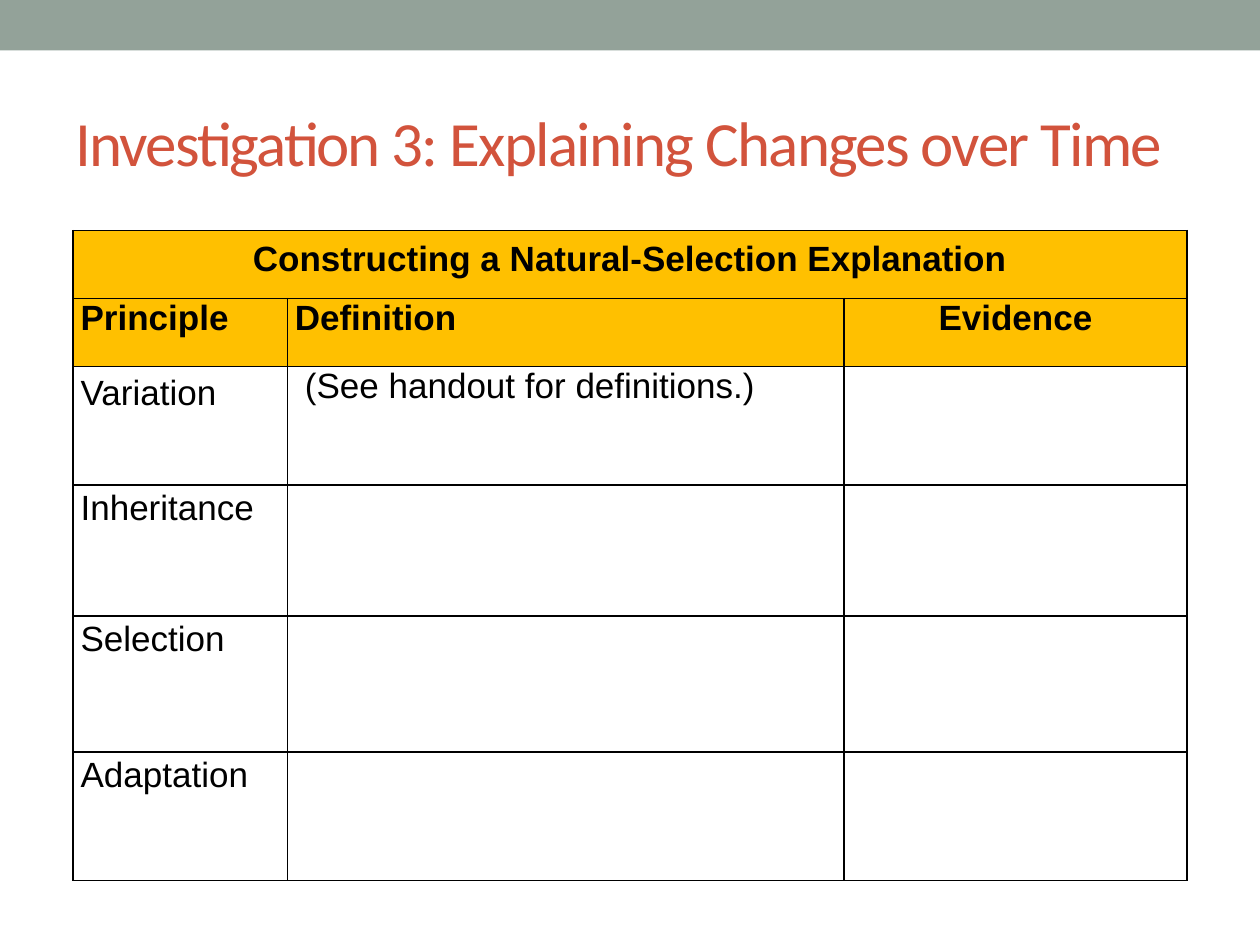
from dataclasses import dataclass

import pptx
import pptx.dml.color
import pptx.enum.shapes
import pptx.enum.text
import pptx.oxml
import pptx.oxml.ns
import pptx.util
from pptx.util import Inches

SAGE, RUST, AMBER = "93A299", "D2533C", "FFC000"
BLACK, WHITE = "000000", "FFFFFF"
ALIGN = pptx.enum.text.PP_ALIGN

COLUMN_WIDTHS = (1.7, 4.42, 2.72)
ROW_HEIGHTS = (0.54, 0.54, 0.94, 1.04, 1.08, 1.02)
HEADER_ROWS = 2


@dataclass
class Entry:
    row: int
    column: int
    wording: str
    align: ALIGN = ALIGN.LEFT
    top: float = 0
    left: float = 0.06


ENTRIES = (
    Entry(0, 0, "Constructing a Natural-Selection Explanation", ALIGN.CENTER, top=0.07),
    Entry(1, 0, "Principle"),
    Entry(1, 1, "Definition"),
    Entry(1, 2, "Evidence", ALIGN.CENTER),
    Entry(2, 0, "Variation", top=0.06),
    Entry(2, 1, "(See handout for definitions.)", left=0.14),
    Entry(3, 0, "Inheritance", top=0.03),
    Entry(4, 0, "Selection", top=0.03),
    Entry(5, 0, "Adaptation", top=0.03),
)


def paint(color_format, hex_color: str) -> None:
    """Give a fill or a font a solid colour."""
    if hasattr(color_format, "solid"):
        color_format.solid()
        color_format.fore_color.rgb = pptx.dml.color.RGBColor.from_string(hex_color)
    else:
        color_format.color.rgb = pptx.dml.color.RGBColor.from_string(hex_color)


def style_font(font, name: str, size: float, hex_color: str, bold: bool = False) -> None:
    font.name = name
    font.size = pptx.util.Pt(size)
    font.bold = bold
    paint(font, hex_color)


def add_band(slide) -> None:
    band = slide.shapes.add_shape(
        pptx.enum.shapes.MSO_SHAPE.RECTANGLE, 0, 0, Inches(10), Inches(0.4))
    band.shadow.inherit = False
    paint(band.fill, SAGE)
    band.line.fill.background()


def add_title(slide, wording: str) -> None:
    frame = slide.shapes.add_textbox(
        Inches(0.5), Inches(0.58), Inches(9), Inches(1.08)).text_frame
    frame.word_wrap = True
    frame.vertical_anchor = pptx.enum.text.MSO_ANCHOR.MIDDLE
    frame.text = wording
    run = frame.paragraphs[0].runs[0]
    style_font(run.font, "Calibri", 36, RUST)
    run.font._element.set("spc", "-100")


def add_borders(cell, hex_color: str, width: float) -> None:
    """Line all four sides; borders must come before the fill in the XML."""
    properties = cell._tc.get_or_add_tcPr()
    for position, side in enumerate(("lnL", "lnR", "lnT", "lnB")):
        properties.insert(position, pptx.oxml.parse_xml(
            f'<a:{side} {pptx.oxml.ns.nsdecls("a")} w="{pptx.util.Pt(width)}">'
            f'<a:solidFill><a:srgbClr val="{hex_color}"/></a:solidFill></a:{side}>'))


def write_entry(table, entry: Entry) -> None:
    cell = table.cell(entry.row, entry.column)
    cell.margin_left, cell.margin_right = Inches(entry.left), Inches(0.06)
    cell.margin_top, cell.margin_bottom = Inches(entry.top), 0
    cell.text_frame.text = entry.wording
    paragraph = cell.text_frame.paragraphs[0]
    paragraph.alignment = entry.align
    style_font(paragraph.runs[0].font, "Arial", 20, BLACK, entry.row < HEADER_ROWS)


def add_principles_table(slide) -> None:
    table = slide.shapes.add_table(
        len(ROW_HEIGHTS), len(COLUMN_WIDTHS), Inches(0.58), Inches(1.83),
        Inches(sum(COLUMN_WIDTHS)), Inches(sum(ROW_HEIGHTS))).table
    for column, width in zip(table.columns, COLUMN_WIDTHS):
        column.width = Inches(width)
    for index, (row, height) in enumerate(zip(table.rows, ROW_HEIGHTS)):
        row.height = Inches(height)
        for cell in row.cells:
            paint(cell.fill, AMBER if index < HEADER_ROWS else WHITE)
            add_borders(cell, BLACK, 1)
    table.cell(0, 0).merge(table.cell(0, len(COLUMN_WIDTHS) - 1))
    for entry in ENTRIES:
        write_entry(table, entry)


def main() -> None:
    presentation = pptx.Presentation()
    presentation.slide_width = Inches(10)
    presentation.slide_height = Inches(7.5)
    slide = presentation.slides.add_slide(presentation.slide_layouts[6])
    add_band(slide)
    add_title(slide, "Investigation 3: Explaining Changes over Time")
    add_principles_table(slide)
    presentation.save("out.pptx")


if __name__ == "__main__":
    main()
